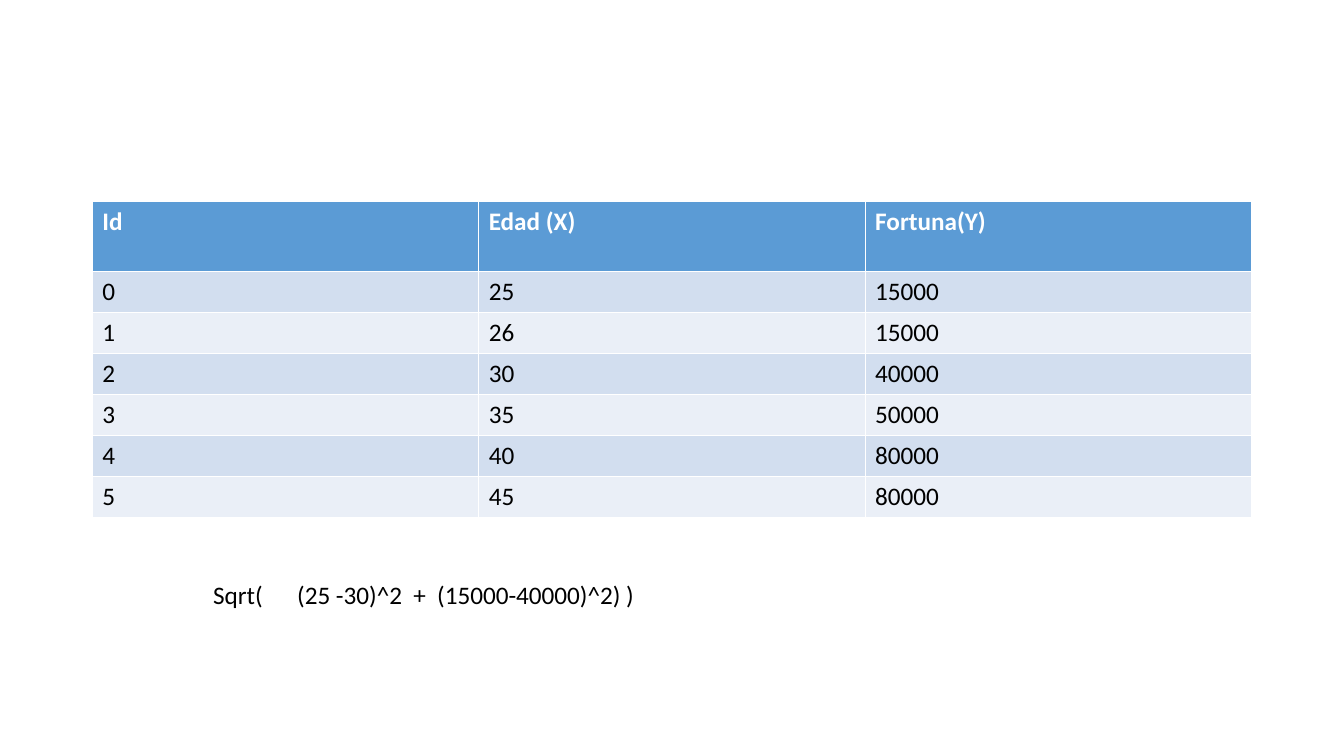
from pptx import Presentation
from pptx.dml.color import RGBColor
from pptx.oxml import parse_xml
from pptx.oxml.ns import nsdecls
from pptx.util import Pt

COLORS = {
    "header": "5B9BD5",
    "odd_row": "D2DEEF",
    "even_row": "EAEFF7",
    "header_text": "FFFFFF",
    "text": "000000",
}
RECORDS = [
    ("Id", "Edad (X)", "Fortuna(Y)"),
    (0, 25, 15000),
    (1, 26, 15000),
    (2, 30, 40000),
    (3, 35, 50000),
    (4, 40, 80000),
    (5, 45, 80000),
]
HEADER_HEIGHT = 50
ROW_HEIGHT = 29.28
COLUMN_WIDTH = 276


def format_font(font, color, bold=False):
    font.name = "Calibri"
    font.size = Pt(18)
    font.bold = bold
    font.color.rgb = RGBColor.from_string(COLORS[color])


presentation = Presentation()
presentation.slide_width = Pt(960)
presentation.slide_height = Pt(540)
slide = presentation.slides.add_slide(presentation.slide_layouts[6])

# Age and fortune table; white grid lines come from the default table style
table_height = HEADER_HEIGHT + ROW_HEIGHT * (len(RECORDS) - 1)
people = slide.shapes.add_table(
    len(RECORDS), len(RECORDS[0]),
    Pt(66), Pt(144), Pt(COLUMN_WIDTH * 3), Pt(table_height),
).table
for column in people.columns:
    column.width = Pt(COLUMN_WIDTH)

for index, record in enumerate(RECORDS):
    is_header = index == 0
    people.rows[index].height = Pt(HEADER_HEIGHT if is_header else ROW_HEIGHT)
    if is_header:
        band = "header"
    else:
        band = "odd_row" if index % 2 else "even_row"
    for cell, value in zip(people.rows[index].cells, record):
        cell.fill.solid()
        cell.fill.fore_color.rgb = RGBColor.from_string(COLORS[band])
        paragraph = cell.text_frame.paragraphs[0]
        paragraph.text = str(value)
        format_font(paragraph.runs[0].font,
                    "header_text" if is_header else "text", is_header)

# Distance formula, its terms spaced by tab stops
formula = slide.shapes.add_textbox(Pt(145.2), Pt(410.4), Pt(497.5), Pt(29))
formula.text_frame.word_wrap = True
distance = formula.text_frame.paragraphs[0]
distance.text = "Sqrt(\t(25 -30)^2\t+\t(15000-40000)^2) )"
stops = "".join(f'<a:tab pos="{Pt(stop)}" algn="l"/>' for stop in (60, 143, 160))
distance._p.get_or_add_pPr().append(
    parse_xml(f'<a:tabLst {nsdecls("a")}>{stops}</a:tabLst>'))
for run in distance.runs:
    format_font(run.font, "text")

presentation.save("out.pptx")
